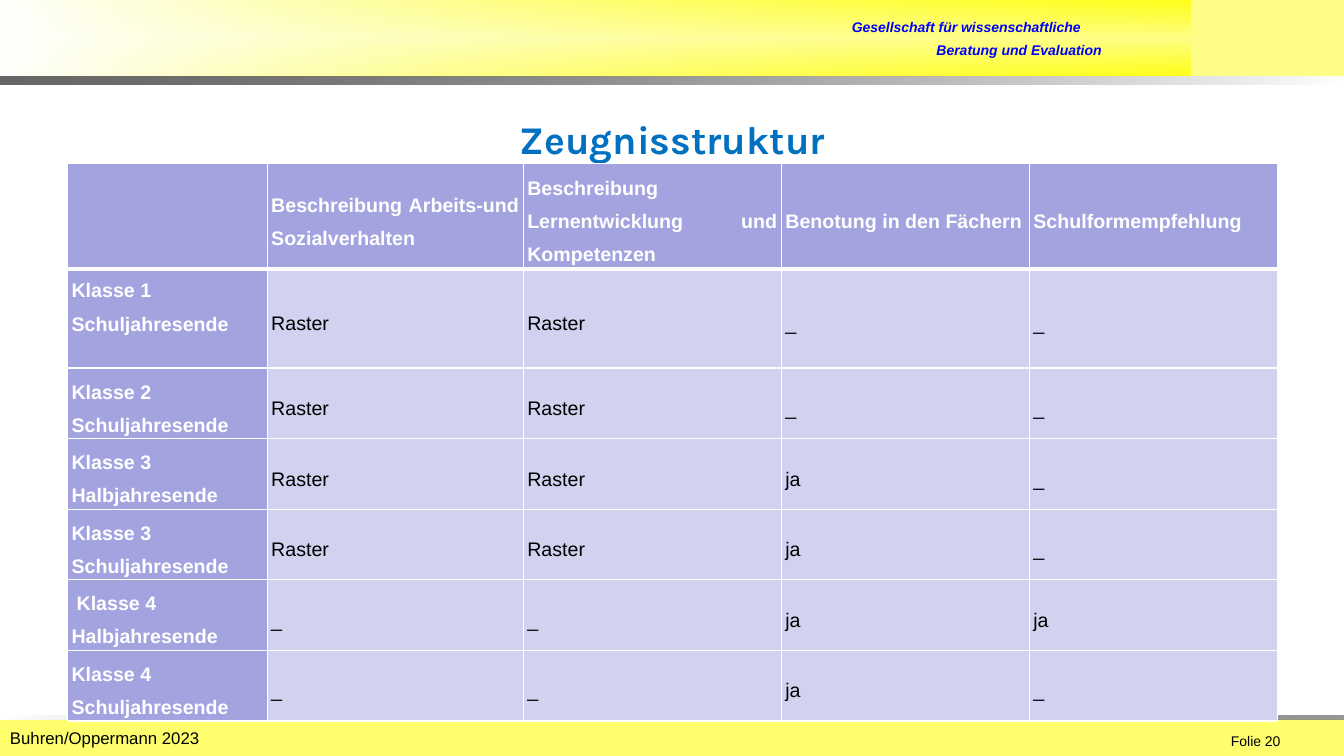
"""Build the slide on the structure of school reports."""
from lxml import etree
from pptx import Presentation
from pptx import util as u
from pptx.dml.color import RGBColor
from pptx.enum import shapes, text
from pptx.oxml import parse_xml
from pptx.oxml.ns import nsdecls, qn

hues = {"yellow": "FFFF00", "white": "FFFFFF", "black": "000000", "blue": "0000FF",
        "title": "0070C0", "head": "A3A3E0", "body": "D1D1F0"}
deck = Presentation()
deck.slide_width, deck.slide_height = u.Inches(13.33), u.Inches(7.5)
wide, high = deck.slide_width, deck.slide_height
slide = deck.slides.add_slide(deck.slide_layouts[6])


def style(para, size, hue, font="Arial", bold=False, slant=False):
    for run in para.runs:
        run.font.size, run.font.name = u.Pt(size), font
        run.font.bold, run.font.italic = bold, slant
        run.font.color.rgb = RGBColor.from_string(hues[hue])


def band(left, top, width, height, stops, angle=0, turn=0):
    bar = slide.shapes.add_shape(shapes.MSO_SHAPE.RECTANGLE, *map(u.Inches, (left, top, width, height)))
    bar.shadow.inherit = False
    bar.rotation = turn
    bar.line.fill.background()
    marks = "".join(
        f'<a:gs pos="{pos * 1000}"><a:srgbClr val="{hues[hue]}"><a:alpha val="{alpha * 1000}"/>'
        f'</a:srgbClr></a:gs>' for pos, hue, alpha in stops)
    fill = parse_xml(f'<a:gradFill {nsdecls("a")} rotWithShape="1"><a:gsLst>{marks}</a:gsLst>'
                     f'<a:lin ang="{angle * 60000}" scaled="0"/></a:gradFill>')
    bar._element.spPr.find(qn("a:prstGeom")).addnext(fill)


full = wide / u.Inches(1)
band(0, 0, 11.81, 0.76, [(0, "yellow", 91), (50, "white", 100), (100, "yellow", 91)], 90)
band(0, 0, full, 0.76, [(0, "yellow", 47), (100, "white", 100)], 0, 180)
band(0, 7.14, full, 0.36, [(0, "yellow", 57), (100, "yellow", 57)])
band(0, 0.76, full, 0.08, [(0, "black", 60), (100, "white", 100)], 45)
band(0, 7.1, full, 0.04, [(0, "black", 41), (100, "white", 100)], 45, 180)

labels = [
    ("Gesellschaft für wissenschaftliche", 8.35, 0.13, 3.57, 0.27, 10, "blue", "Arial", True, True),
    ("Beratung und Evaluation", 9.19, 0.36, 2.73, 0.27, 10, "blue", "Arial", True, True),
    ("Folie 20", 12.11, 7.22, 1.2, 0.27, 10, "black"),
    ("Buhren/Oppermann 2023", 0, 7.17, 6.89, 0.33, 12, "black"),
    ("Zeugnisstruktur", 0.67, 0.92, 12, 0.92, 28, "title", "Karla", True),
]
for words, left, top, width, height, *look in labels:
    box = slide.shapes.add_textbox(*map(u.Inches, (left, top, width, height)))
    frame = box.text_frame
    frame.word_wrap = True
    frame.text = words
    style(frame.paragraphs[0], *look)
frame.vertical_anchor = text.MSO_ANCHOR.MIDDLE
frame.paragraphs[0].alignment = text.PP_ALIGN.CENTER

rows = [
    ["", "Beschreibung Arbeits-und Sozialverhalten", "Beschreibung Lernentwicklung und Kompetenzen",
     "Benotung in den Fächern", "Schulformempfehlung"],
    ["Klasse 1\vSchuljahresende", "Raster", "Raster", "_", "_"],
    ["Klasse 2\vSchuljahresende", "Raster", "Raster", "_", "_"],
    ["Klasse 3\vHalbjahresende", "Raster", "Raster", "ja", "_"],
    ["Klasse 3\vSchuljahresende", "Raster", "Raster", "ja", "_"],
    ["Klasse 4\vHalbjahresende", "_", "_", "ja", "ja"],
    ["Klasse 4\vSchuljahresende", "_", "_", "ja", "_"],
]
tall = [0.98, 0.98, 0.66, 0.66, 0.66, 0.69, 0.66]
broad = [1.98, 2.54, 2.56, 2.46, 2.46]
grid = slide.shapes.add_table(len(rows), len(broad), u.Inches(0.67), u.Inches(1.62),
                              u.Inches(sum(broad)), u.Inches(sum(tall))).table
for col, width in zip(grid.columns, broad):
    col.width = u.Inches(width)
for r, (row, height) in enumerate(zip(rows, tall)):
    grid.rows[r].height = u.Inches(height)
    for c, words in enumerate(row):
        cell = grid.cell(r, c)
        cell.margin_left = cell.margin_right = u.Inches(0.04)
        cell.margin_top = cell.margin_bottom = 0
        cell.vertical_anchor = text.MSO_ANCHOR.TOP if (r, c) == (1, 0) else text.MSO_ANCHOR.MIDDLE
        props = cell._tc.get_or_add_tcPr()
        for side in "LRTB":
            thick = 3 if (r, side) in [(0, "B"), (1, "T")] else 1
            edge = etree.SubElement(props, qn(f"a:ln{side}"), w=str(u.Pt(thick)))
            paint = etree.SubElement(edge, qn("a:solidFill"))
            etree.SubElement(paint, qn("a:srgbClr"), val=hues["white"])
        lead = r == 0 or c == 0
        cell.fill.solid()
        cell.fill.fore_color.rgb = RGBColor.from_string(hues["head" if lead else "body"])
        cell.text_frame.text = words
        para = cell.text_frame.paragraphs[0]
        para.line_spacing = 1.5
        para.alignment = text.PP_ALIGN.JUSTIFY if c else text.PP_ALIGN.LEFT
        style(para, 14, "white" if lead else "black", bold=lead)
grid.cell(5, 0).text_frame.paragraphs[0]._p.get_or_add_pPr().set("indent", str(u.Inches(0.05)))

deck.save("out.pptx")
